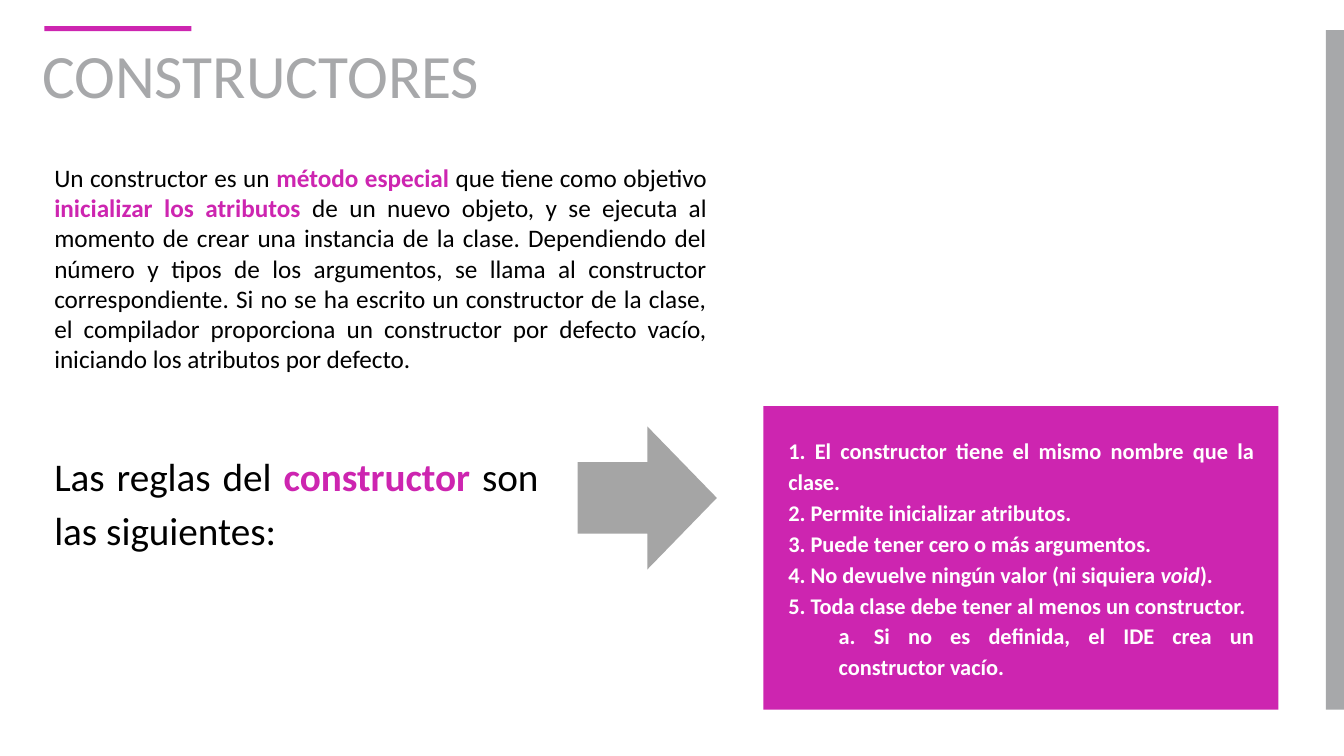
from pptx import Presentation
from pptx import util as u
from pptx.dml import color
from pptx.enum import shapes, text

PX = 9144
PINK, GREY, SILVER = "CD25B0", "A7A8AA", "A5A5A5"
BLACK, WHITE = "000000", "FFFFFF"
RECT = shapes.MSO_SHAPE.RECTANGLE
ARROW = shapes.MSO_SHAPE.RIGHT_ARROW
LEFT, JUST = text.PP_ALIGN.LEFT, text.PP_ALIGN.JUSTIFY

INTRO = [
    ("Un constructor es un ", ""),
    ("método especial ", "key"),
    ("que tiene como objetivo ", ""),
    ("inicializar los atributos ", "key"),
    ("de un nuevo objeto, y se ejecuta al momento de crear una instancia "
     "de la clase. Dependiendo del número y tipos de los argumentos, se "
     "llama al constructor correspondiente. Si no se ha escrito un "
     "constructor de la clase, el compilador proporciona un constructor "
     "por defecto vacío, iniciando los atributos por defecto.", ""),
]
LEAD = [("Las reglas del ", ""), ("constructor ", "key"),
        ("son las siguientes:", "")]
RULES = [
    [("1. El constructor tiene el mismo nombre que la clase.", "bold")],
    [("2. Permite inicializar atributos.", "bold")],
    [("3. Puede tener cero o más argumentos.", "bold")],
    [("4. No devuelve ningún valor (ni siquiera ", "bold"),
     ("void", "slant"), (").", "bold")],
    [("5. Toda clase debe tener al menos un constructor.", "bold")],
]
NOTE = [("a. Si no es definida, el IDE crea un constructor vacío.", "bold")]


def rgb(code):
    """Turn a hex string into a colour."""
    return color.RGBColor.from_string(code)


def box(area):
    """Turn a px rectangle into EMU."""
    return [n * PX for n in area]


def block(slide, kind, area, fill):
    """Draw a plain filled shape."""
    shape = slide.shapes.add_shape(kind, *box(area))
    shape.shadow.inherit = False
    shape.fill.solid()
    shape.fill.fore_color.rgb = rgb(fill)
    shape.line.fill.background()


def frame(slide, area):
    """Add a wrapping text box and return its frame."""
    body = slide.shapes.add_textbox(*box(area)).text_frame
    body.word_wrap = True
    return body


def write(para, parts, size, ink, align=JUST, gap=1.0, indent=0):
    """Fill a paragraph with styled runs."""
    para.alignment = align
    para.line_spacing = gap
    if indent:
        props = para._p.get_or_add_pPr()
        props.set("marL", str(indent * PX))
        props.set("indent", "0")
    for words, style in parts:
        run = para.add_run()
        run.text = words
        font = run.font
        font.name = "Calibri"
        font.size = u.Pt(size)
        font.bold = style != ""
        font.italic = style == "slant"
        font.color.rgb = rgb(PINK if style == "key" else ink)


def rules(slide, area):
    """Write the list of rules and its nested note."""
    body = frame(slide, area)
    for i, parts in enumerate(RULES + [NOTE]):
        para = body.add_paragraph() if i else body.paragraphs[0]
        inner = parts is NOTE
        para.level = int(inner)
        write(para, parts, 16, WHITE, gap=1.15, indent=65 if inner else 15)


def main():
    """Build the slide and save it."""
    deck = Presentation()
    deck.slide_width, deck.slide_height = box((1333, 750))
    slide = deck.slides.add_slide(deck.slide_layouts[6])
    block(slide, RECT, (1315, 30, 19, 674), GREY)
    title = frame(slide, (32, 40, 1150, 145))
    write(title.paragraphs[0], [("CONSTRUCTORES", "")], 44, GREY, LEFT, 0.9)
    block(slide, RECT, (44, 26, 146, 5), PINK)
    intro = frame(slide, (44, 156, 667, 222))
    write(intro.paragraphs[0], INTRO, 18, BLACK)
    lead = frame(slide, (44, 437, 500, 115))
    write(lead.paragraphs[0], LEAD, 28, BLACK, gap=1.15)
    block(slide, ARROW, (573, 423, 138, 142), SILVER)
    block(slide, RECT, (757, 403, 511, 301), PINK)
    rules(slide, (757, 425, 497, 256))
    deck.save("out.pptx")


if __name__ == "__main__":
    main()
